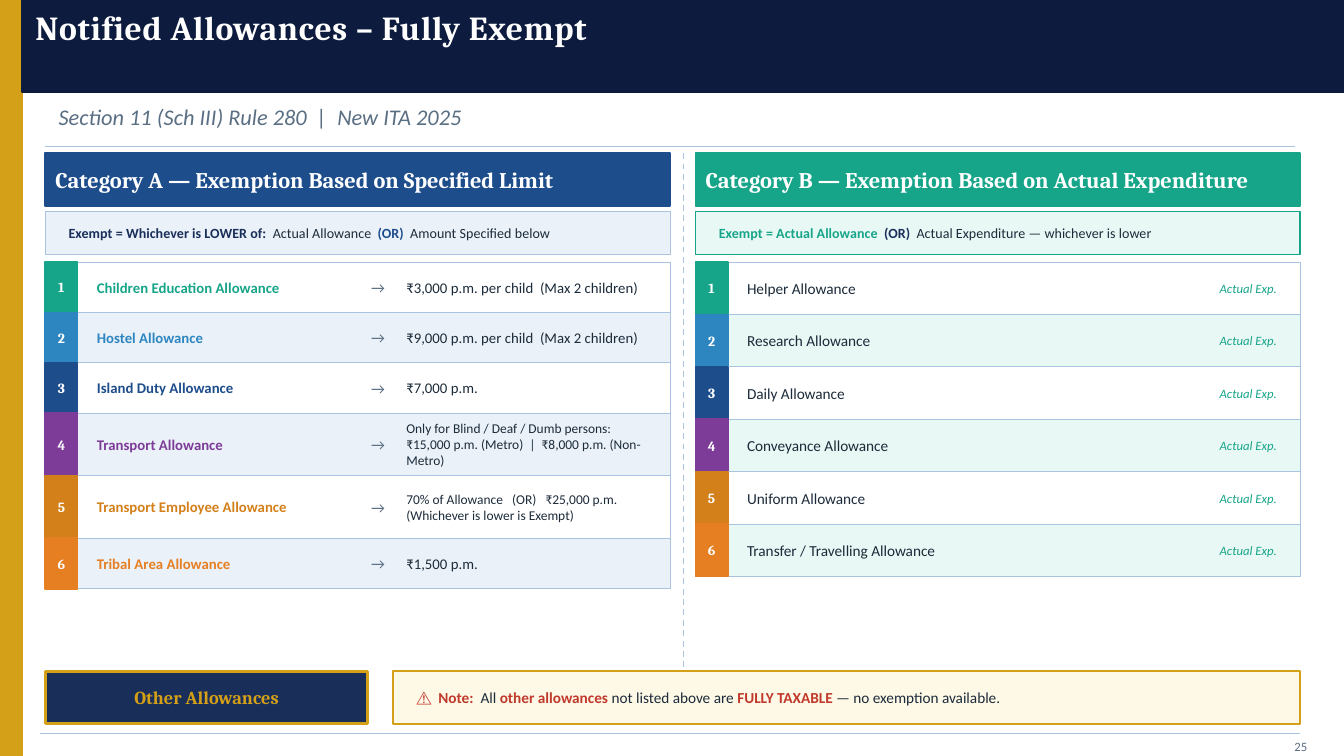
"""Build the slide of fully exempt notified allowances on a grid of 75 rows."""
from dataclasses import dataclass, replace
from typing import NamedTuple

from lxml import etree
from pptx import Presentation
from pptx import util as u
from pptx.dml import color
from pptx.enum import dml, shapes, text
from pptx.oxml import ns

CELL = 0.075
COLS, ROWS = 10 / CELL, 75
HEX = {
    "white": "FFFFFF", "gold": "D4A017", "navy": "0D1B3E", "indigo": "1A2E5A",
    "blue": "1E4D8C", "sky": "2E86C1", "teal": "17A589", "purple": "7D3C98",
    "amber": "D4801A", "orange": "E67E22", "red": "C0392B", "ink": "1C2B3A",
    "grey": "5A6F84", "rule": "A8C4E0", "ice": "EAF1F8", "mint": "E8F8F5",
    "cream": "FEF9E7",
}
BADGES = ("teal", "sky", "blue", "purple", "amber", "orange")
LEFT, CENTER, RIGHT = text.PP_ALIGN.LEFT, text.PP_ALIGN.CENTER, text.PP_ALIGN.RIGHT
TABLE_TOP = 26


class Box(NamedTuple):
    col: float
    row: float
    cols: float
    rows: float


@dataclass(frozen=True)
class Style:
    size: float
    color: str = "ink"
    bold: bool = False
    italic: bool = False
    font: str = "Calibri"


@dataclass(frozen=True)
class Allowance:
    name: str
    limit: str
    rows: float = 5
    size: float = 7.9


@dataclass(frozen=True)
class Panel:
    col: float
    cols: float
    title: str
    color: str
    tint: str
    rule: str
    formula: tuple


BADGE = Style(7.5, "white", bold=True, font="Cambria")
HEADING = replace(BADGE, size=12)
RULE_TEXT = Style(7.5)

PANEL_A = Panel(
    4.5, 62, "Category A — Exemption Based on Specified Limit", "blue", "ice", "rule",
    (("Exempt = Whichever is LOWER of:  ", "indigo", True), ("Actual Allowance  ", "ink", False),
     ("(OR)  ", "blue", True), ("Amount Specified below", "ink", False)))
PANEL_B = Panel(
    69, 60, "Category B — Exemption Based on Actual Expenditure", "teal", "mint", "teal",
    (("Exempt = Actual Allowance  ", "teal", True), ("(OR)  ", "indigo", True),
     ("Actual Expenditure — whichever is lower", "ink", False)))
LIMITED = (
    Allowance("Children Education Allowance", "₹3,000 p.m. per child  (Max 2 children)"),
    Allowance("Hostel Allowance", "₹9,000 p.m. per child  (Max 2 children)"),
    Allowance("Island Duty Allowance", "₹7,000 p.m."),
    Allowance("Transport Allowance", "Only for Blind / Deaf / Dumb persons:\n"
              "₹15,000 p.m. (Metro)  |  ₹8,000 p.m. (Non-Metro)", 6.2, 7.2),
    Allowance("Transport Employee Allowance", "70% of Allowance   (OR)   ₹25,000 p.m.\n"
              "(Whichever is lower is Exempt)", 6.2, 7.2),
    Allowance("Tribal Area Allowance", "₹1,500 p.m."),
)
ACTUAL = tuple(
    Allowance(f"{kind} Allowance", "Actual Exp.", 5.2, 6.8)
    for kind in ("Helper", "Research", "Daily", "Conveyance", "Uniform", "Transfer / Travelling"))
NOTE = (("⚠  Note:  ", "red", True), ("All ", "ink", False), ("other allowances", "red", True),
        (" not listed above are ", "ink", False), ("FULLY TAXABLE", "red", True),
        (" — no exemption available.", "ink", False))


def grid(*cells: float) -> list[int]:
    """Turn grid cells into slide lengths."""
    return [u.Inches(c * CELL) for c in cells]


def rgb(name: str) -> color.RGBColor:
    """Look up a named colour."""
    return color.RGBColor.from_string(HEX[name])


def format_run(r, style: Style) -> None:
    """Apply a style to one run."""
    r.font.name, r.font.size = style.font, u.Pt(style.size)
    r.font.bold, r.font.italic = style.bold, style.italic
    r.font.color.rgb = rgb(style.color)


def rect(s, box: Box, fill: str, line: str, width: float = 1):
    """Draw a filled rectangle with an outline."""
    sp = s.shapes.add_shape(shapes.MSO_SHAPE.RECTANGLE, *grid(*box))
    sp.shadow.inherit = False
    sp.fill.solid()
    sp.fill.fore_color.rgb = rgb(fill)
    sp.line.color.rgb = rgb(line)
    sp.line.width = u.Pt(width)
    return sp


def rule(s, start: tuple, end: tuple, width: float, dashed: bool = False) -> None:
    """Draw a straight rule between two grid points."""
    cx = s.shapes.add_connector(shapes.MSO_CONNECTOR.STRAIGHT, *grid(*start, *end))
    cx.line.color.rgb = rgb("rule")
    cx.line.width = u.Pt(width)
    if dashed:
        cx.line.dash_style = dml.MSO_LINE.DASH
    etree.SubElement(cx._element.spPr, ns.qn("a:effectLst"))


def frame(s, box: Box, flush: bool = False):
    """Add an empty wrapped text frame centred vertically."""
    tf = s.shapes.add_textbox(*grid(*box)).text_frame
    tf.word_wrap = True
    tf.vertical_anchor = text.MSO_ANCHOR.MIDDLE
    if flush:
        tf.margin_left = tf.margin_right = tf.margin_top = tf.margin_bottom = 0
    return tf


def fill_text(tf, words: str, style: Style, align=LEFT) -> None:
    """Set uniformly styled text in a frame."""
    tf.text = words
    for p in tf.paragraphs:
        p.alignment = align
        for r in p.runs:
            format_run(r, style)


def label(s, box: Box, words: str, style: Style, align=LEFT, flush: bool = False) -> None:
    """Add a text box in one style."""
    fill_text(frame(s, box, flush), words, style, align)


def rich_label(s, box: Box, parts: tuple, style: Style) -> None:
    """Add a one-line text box of differently coloured parts."""
    p = frame(s, box).paragraphs[0]
    for words, tone, bold in parts:
        r = p.add_run()
        r.text = words
        format_run(r, replace(style, color=tone, bold=bold))


def draw_panel(s, panel: Panel, inset: float) -> None:
    """Draw a category heading with its exemption formula."""
    inner = panel.col + inset, panel.cols - 2
    head, formula = (15.2, 5.2), (21, 4.25)
    rect(s, Box(panel.col, head[0], panel.cols, head[1]), panel.color, panel.color)
    label(s, Box(inner[0], head[0], inner[1], head[1]), panel.title, HEADING, flush=True)
    rect(s, Box(panel.col, formula[0], panel.cols, formula[1]), panel.tint, panel.rule, 0.8)
    rich_label(s, Box(inner[0], formula[0], inner[1], formula[1]), panel.formula, RULE_TEXT)


def draw_rows(s, panel: Panel, items: tuple, limited: bool) -> None:
    """Draw the numbered allowance rows of a category."""
    top = TABLE_TOP
    for i, (item, tone) in enumerate(zip(items, BADGES)):
        rows = item.rows
        badge = Box(panel.col, top, 3.2, rows)
        rect(s, Box(panel.col, top, panel.cols, rows), panel.tint if i % 2 else "white", "rule", 0.5)
        rect(s, badge, tone, tone)
        label(s, badge, str(i + 1), BADGE, CENTER, flush=True)
        name_col = panel.col + 3.8
        if limited:
            label(s, Box(name_col, top, 27, rows), item.name, Style(7.9, tone, bold=True))
            label(s, Box(35.5, top, 3, rows), "→", Style(8.2, "grey"), CENTER)
            label(s, Box(39, top, 26.5, rows), item.limit, Style(item.size))
        else:
            label(s, Box(name_col, top, 46, rows), item.name, Style(8.2))
            label(s, Box(119.5, top, 8.5, rows), item.limit, Style(item.size, "teal", italic=True), RIGHT)
        top += rows


def main() -> None:
    """Compose and save the slide."""
    prs = Presentation()
    prs.slide_width, prs.slide_height = grid(COLS, ROWS)
    s = prs.slides.add_slide(prs.slide_layouts[6])
    rect(s, Box(0, 0, 2.2, ROWS), "gold", "gold")
    label(s, Box(4.5, 10.1, 90, 3), "Section 11 (Sch III) Rule 280  |  New ITA 2025",
          Style(12, "grey", italic=True))
    rule(s, (4.5, 14.5), (128.5, 14.5), 0.6)
    draw_panel(s, PANEL_A, 1)
    draw_rows(s, PANEL_A, LIMITED, True)
    draw_panel(s, PANEL_B, 1)
    draw_rows(s, PANEL_B, ACTUAL, False)
    rule(s, (67.8, 15.2), (67.8, 71.5), 0.8, dashed=True)
    other = Box(4.5, 66.6, 32, 5.2)
    rect(s, other, "indigo", "gold", 1.5)
    label(s, other, "Other Allowances", Style(9.8, "gold", bold=True, font="Cambria"), CENTER)
    rect(s, Box(39, 66.6, 90, 5.2), "cream", "gold", 1.2)
    rich_label(s, Box(40, 66.6, 88, 5.2), NOTE, Style(8.2))
    rule(s, (4, 72.8), (129, 72.8), 0.5)
    label(s, Box(126, 73, 5, 2), "25", Style(6.8, "grey"), RIGHT)
    tf = rect(s, Box(2.2, 0, COLS - 2.2, 9.1), "navy", "navy").text_frame
    tf.vertical_anchor = text.MSO_ANCHOR.TOP
    fill_text(tf, "Notified Allowances – Fully Exempt", replace(HEADING, size=18))
    tf.paragraphs[0].runs[0].font._element.set("spc", "40")
    prs.save("out.pptx")


if __name__ == "__main__":
    main()
